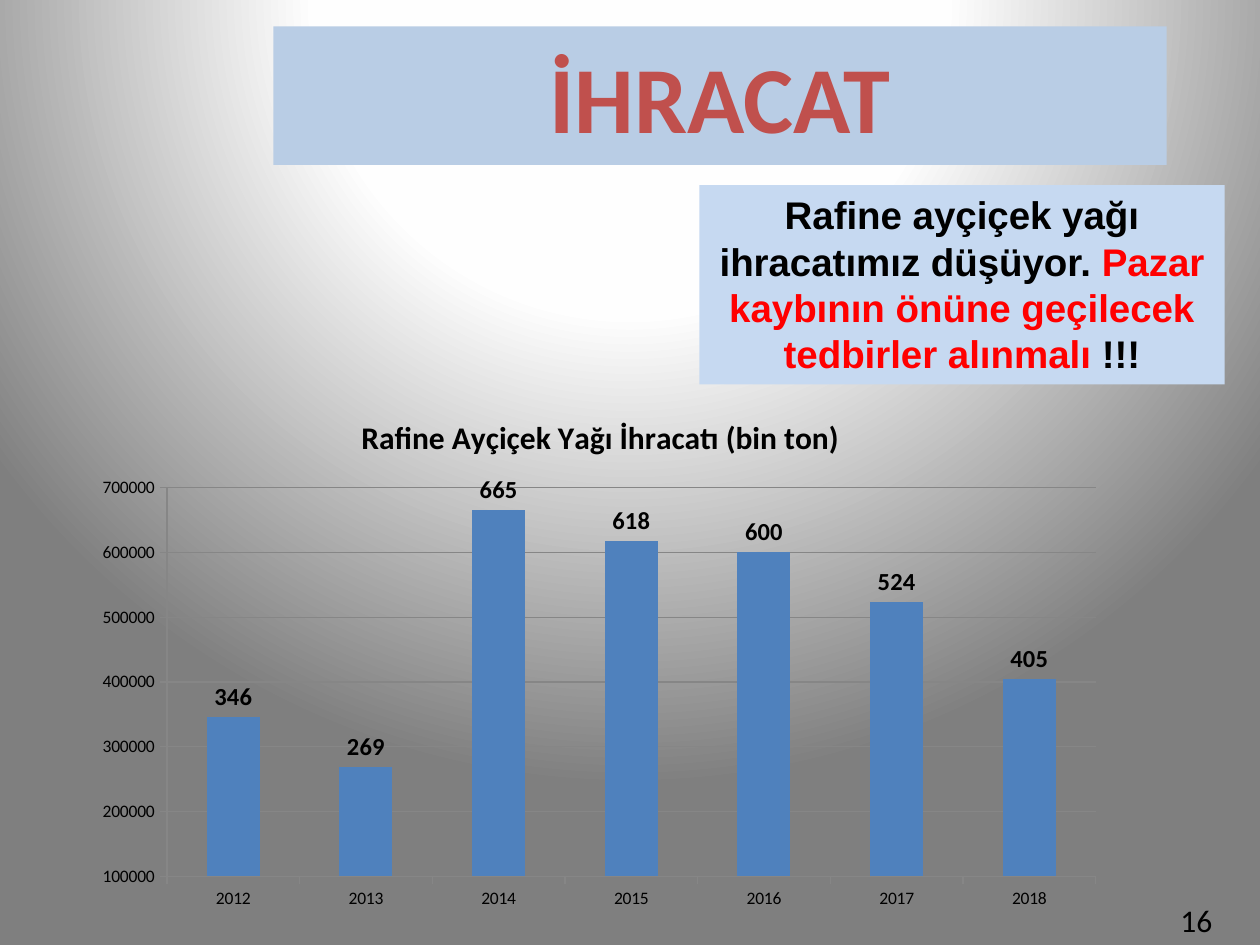
from lxml import etree
from pptx import Presentation
from pptx.chart.data import CategoryChartData
from pptx.dml.color import RGBColor
from pptx.enum.chart import XL_CHART_TYPE, XL_LABEL_POSITION, XL_TICK_MARK
from pptx.enum.shapes import MSO_SHAPE
from pptx.enum.text import MSO_ANCHOR, MSO_AUTO_SIZE, PP_ALIGN
from pptx.oxml import parse_xml
from pptx.oxml.ns import nsdecls, qn
from pptx.util import Inches, Pt

COLUMNS = XL_CHART_TYPE.COLUMN_CLUSTERED
ABOVE = XL_LABEL_POSITION.OUTSIDE_END
TICK_OUT = XL_TICK_MARK.OUTSIDE
CENTER = PP_ALIGN.CENTER

BLACK = RGBColor(0x00, 0x00, 0x00)
RED = RGBColor(0xFF, 0x00, 0x00)
TITLE_RED = RGBColor(0xC0, 0x50, 0x4D)
TITLE_FILL = RGBColor(0xB9, 0xCD, 0xE5)
NOTE_FILL = RGBColor(0xC6, 0xD9, 0xF1)
BAR_BLUE = RGBColor(0x4F, 0x81, 0xBD)
AXIS_GRAY = RGBColor(0x86, 0x86, 0x86)

TITLE = "İHRACAT"
NOTE = [
    ("Rafine ayçiçek yağı ihracatımız düşüyor. ", BLACK),
    ("Pazar kaybının önüne geçilecek tedbirler alınmalı", RED),
    (" !!!", BLACK),
]
CHART_TITLE = "Rafine Ayçiçek Yağı İhracatı (bin ton)"
EXPORTS = {  # thousand tonnes
    "2012": 346, "2013": 269, "2014": 665, "2015": 618,
    "2016": 600, "2017": 524, "2018": 405,
}
PAGE = "16"
BACKDROP = [(0, "FFFFFF"), (40, "FEFEFE"), (100, "7F7F7F")]  # percent, colour
PLOT = {"x": 0.08, "y": 0.18, "w": 0.9, "h": 0.74}  # shares of the chart

TITLE_BOX = (2.17, 0.21, 7.09, 1.1)
NOTE_BOX = (5.55, 1.47, 4.17, 1.58)
CHART_BOX = (0.67, 3.12, 8.19, 4.17)
PAGE_BOX = (9.27, 7.1, 0.51, 0.4)


def inches(box):
    return [Inches(v) for v in box]


def style(font, size, color=BLACK, bold=False, name="Calibri"):
    font.size, font.bold, font.name = Pt(size), bold, name
    font.color.rgb = color


def add_run(p, text, *args, **kwargs):
    r = p.add_run()
    r.text = text
    style(r.font, *args, **kwargs)


def set_background(s):
    """Radial gradient centred above the middle of the slide."""
    s.background.fill.solid()
    stops = "".join(
        f'<a:gs pos="{pos * 1000}"><a:srgbClr val="{color}"/></a:gs>'
        for pos, color in BACKDROP)
    gradient = parse_xml(
        f'<a:gradFill rotWithShape="1" {nsdecls("a")}><a:gsLst>{stops}</a:gsLst>'
        '<a:path path="circle"><a:fillToRect l="50000" t="-80000" r="50000"'
        ' b="180000"/></a:path></a:gradFill>')
    bg = s._element.find(".//" + qn("p:bgPr"))
    bg.replace(bg[0], gradient)


def add_title(s):
    sp = s.shapes.title
    sp.left, sp.top, sp.width, sp.height = inches(TITLE_BOX)
    geometry = etree.SubElement(
        sp._element.spPr, qn("a:prstGeom"), prst="roundRect")
    etree.SubElement(geometry, qn("a:avLst"))
    sp.fill.solid()
    sp.fill.fore_color.rgb = TITLE_FILL
    tf = sp.text_frame
    tf.vertical_anchor = MSO_ANCHOR.MIDDLE
    tf.auto_size = MSO_AUTO_SIZE.NONE
    p = tf.paragraphs[0]
    p.alignment = CENTER
    add_run(p, TITLE, 54, TITLE_RED, bold=True)


def add_chart(s):
    data = CategoryChartData(number_format="0")
    data.categories = list(EXPORTS)
    data.add_series("Series 1", [v * 1000 for v in EXPORTS.values()])
    chart = s.shapes.add_chart(COLUMNS, *inches(CHART_BOX), data).chart
    style(chart.font, 10)
    chart.has_legend = False
    chart.has_title = True
    add_run(chart.chart_title.text_frame.paragraphs[0], CHART_TITLE, 18, bold=True)
    chart.chart_title.include_in_layout = False

    for axis in (chart.category_axis, chart.value_axis):
        axis.major_tick_mark = TICK_OUT
        axis.format.line.color.rgb = AXIS_GRAY
    values = chart.value_axis
    values.minimum_scale, values.maximum_scale = 100000, 700000
    values.major_unit = 100000
    values.has_major_gridlines = True
    values.major_gridlines.format.line.color.rgb = AXIS_GRAY

    plot = chart.plots[0]
    plot.gap_width = 150
    plot.vary_by_categories = False
    fill = plot.series[0].format.fill
    fill.solid()
    fill.fore_color.rgb = BAR_BLUE
    plot.has_data_labels = True
    labels = plot.data_labels
    labels.show_value = True
    labels.position = ABOVE
    labels.number_format = "0,"  # the comma scales to thousands
    labels.number_format_is_linked = False
    style(labels.font, 14, bold=True)

    area = chart._chartSpace.find(".//" + qn("c:plotArea"))
    for old in area.findall(qn("c:layout")):
        area.remove(old)
    shares = "".join(f'<c:{k} val="{v}"/>' for k, v in PLOT.items())
    area.insert(0, parse_xml(
        f'<c:layout {nsdecls("c")}><c:manualLayout><c:layoutTarget val="inner"/>'
        f'<c:xMode val="edge"/><c:yMode val="edge"/>{shares}'
        '</c:manualLayout></c:layout>'))


def add_note(s):
    sp = s.shapes.add_shape(MSO_SHAPE.RECTANGLE, *inches(NOTE_BOX))
    sp.shadow.inherit = False
    sp.fill.solid()
    sp.fill.fore_color.rgb = NOTE_FILL
    sp.line.fill.background()
    tf = sp.text_frame
    tf.word_wrap = True
    tf.auto_size = MSO_AUTO_SIZE.SHAPE_TO_FIT_TEXT
    tf.vertical_anchor = MSO_ANCHOR.TOP
    p = tf.paragraphs[0]
    p.alignment = CENTER
    for text, color in NOTE:
        add_run(p, text, 22, color, bold=True, name="Arial")


def add_page_number(s):
    tf = s.shapes.add_textbox(*inches(PAGE_BOX)).text_frame
    tf.word_wrap = True
    tf.auto_size = MSO_AUTO_SIZE.SHAPE_TO_FIT_TEXT
    add_run(tf.paragraphs[0], PAGE, 18)


def main():
    prs = Presentation()
    prs.slide_width, prs.slide_height = Inches(10), Inches(7.5)
    s = prs.slides.add_slide(prs.slide_layouts.get_by_name("Title Only"))
    set_background(s)
    add_title(s)
    add_chart(s)
    add_note(s)
    add_page_number(s)
    prs.save("out.pptx")


if __name__ == "__main__":
    main()
